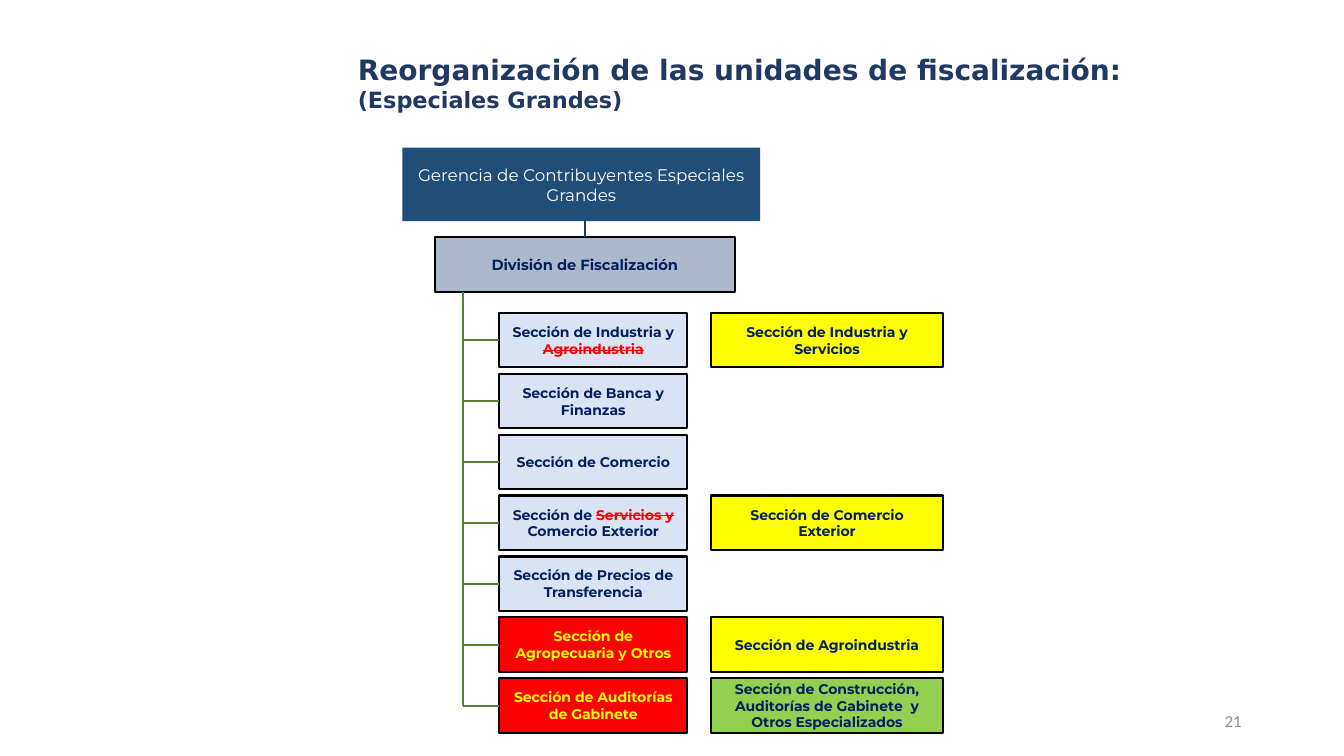
from dataclasses import dataclass

import pptx
import pptx.dml.color
import pptx.enum.shapes
import pptx.enum.text
import pptx.oxml.ns
import pptx.util
from lxml import etree

Pt = pptx.util.Pt
RGB = pptx.dml.color.RGBColor.from_string
ALIGN = pptx.enum.text.PP_ALIGN


@dataclass(frozen=True)
class Theme:
    white: str = "FFFFFF"
    black: str = "000000"
    title: str = "203864"
    navy: str = "002060"
    management: str = "1F4E79"
    division: str = "ADB9CA"
    current: str = "DAE3F3"
    removed: str = "FF0000"
    changed: str = "FFFF00"
    added: str = "92D050"
    branch: str = "548235"
    page: str = "8C8C8C"
    title_font: str = "DejaVu Sans"
    chart_font: str = "Montserrat"
    page_font: str = "Calibri"
    title_size: float = 20
    subtitle_size: float = 16
    management_size: float = 12
    division_size: float = 10.5
    section_size: float = 10
    page_size: float = 12


T = Theme()


def write(p, text, font=T.chart_font, size=T.section_size, color=T.navy,
          bold=True, align=ALIGN.CENTER):
    """Fill a paragraph; parts between ~ marks are struck out in red."""
    p.alignment = align
    for i, part in enumerate(text.split("~")):
        if not part:
            continue
        struck = i % 2 == 1
        r = p.add_run()
        r.text = part
        r.font.name, r.font.size, r.font.bold = font, Pt(size), bold
        r.font.color.rgb = RGB(T.removed if struck else color)
        if struck:
            r.font._element.set("strike", "sngStrike")


def add_box(x, y, w, h, fill, line=T.black, weight=1.5):
    sp = s.shapes.add_shape(pptx.enum.shapes.MSO_SHAPE.RECTANGLE,
                            Pt(x), Pt(y), Pt(w), Pt(h))
    sp.shadow.inherit = False
    sp.fill.solid()
    sp.fill.fore_color.rgb = RGB(fill)
    if line:
        sp.line.color.rgb = RGB(line)
        sp.line.width = Pt(weight)
    else:
        sp.line.fill.background()
    sp.text_frame.word_wrap = True
    sp.text_frame.vertical_anchor = pptx.enum.text.MSO_ANCHOR.MIDDLE
    return sp


prs = pptx.Presentation()
prs.slide_width, prs.slide_height = Pt(960), Pt(540)
s = prs.slides.add_slide(prs.slide_layouts[6])

# Title
title = add_box(248.5, 24, 711.5, 70, T.white, T.white, 0.75)
tf = title.text_frame
write(tf.paragraphs[0], "Reorganización de las unidades de fiscalización:",
      font=T.title_font, size=T.title_size, color=T.title, align=ALIGN.LEFT)
write(tf.add_paragraph(), "(Especiales Grandes)",
      font=T.title_font, size=T.subtitle_size, color=T.title, align=ALIGN.LEFT)

# Upper levels
management = add_box(287.5, 105.5, 255.5, 52.5, T.management, None)
write(management.text_frame.paragraphs[0],
      "Gerencia de Contribuyentes Especiales Grandes",
      size=T.management_size, color=T.white, bold=False)
division = add_box(310.5, 169.5, 214.5, 39, T.division)
write(division.text_frame.paragraphs[0], "División de Fiscalización",
      size=T.division_size)

# Sections: current name, its fill and text colour, new name, its fill
SECTIONS = [
    ("Sección de Industria y ~Agroindustria~", T.current, T.navy,
     "Sección de Industria y Servicios", T.changed),
    ("Sección de Banca y Finanzas", T.current, T.navy, None, None),
    ("Sección de Comercio", T.current, T.navy, None, None),
    ("Sección de ~Servicios y~ Comercio Exterior", T.current, T.navy,
     "Sección de Comercio Exterior", T.changed),
    ("Sección de Precios de Transferencia", T.current, T.navy, None, None),
    ("Sección de Agropecuaria y Otros", T.removed, T.changed,
     "Sección de Agroindustria", T.changed),
    ("Sección de Auditorías de Gabinete", T.removed, T.changed,
     "Sección de Construcción, Auditorías de Gabinete  y Otros Especializados",
     T.added),
]
TOP, PITCH, HEIGHT = 223.5, 43.5, 39
SECTION_X, NEW_X, TRUNK_X = 356.5, 508, 330.5

# Lines: start, end, colour, joined box and its side
lines = [((417.75, 158), (417.75, 169.5), T.title, division, 0)]
for i, (name, fill, color, new_name, new_fill) in enumerate(SECTIONS):
    y = TOP + i * PITCH
    section = add_box(SECTION_X, y, 134.5, HEIGHT, fill)
    write(section.text_frame.paragraphs[0], name, color=color)
    if new_name:
        new_section = add_box(NEW_X, y, 165.5, HEIGHT, new_fill)
        write(new_section.text_frame.paragraphs[0], new_name)
    middle = y + HEIGHT / 2
    lines.append(((TRUNK_X, middle), (SECTION_X, middle), T.branch, section, 1))
lines.append(((TRUNK_X, 208.5), (TRUNK_X, middle), T.branch, None, None))

for start, end, color, target, side in lines:
    line = s.shapes.add_connector(pptx.enum.shapes.MSO_CONNECTOR.STRAIGHT,
                                  *map(Pt, start + end))
    if target is not None:
        line.end_connect(target, side)
    line.line.color.rgb = RGB(color)
    line.line.width = Pt(1.5)
    etree.SubElement(line._element.spPr, pptx.oxml.ns.qn("a:effectLst"))

# Page number
page = s.shapes.add_textbox(Pt(678), Pt(500.5), Pt(216), Pt(29))
page.text_frame.word_wrap = True
page.text_frame.vertical_anchor = pptx.enum.text.MSO_ANCHOR.MIDDLE
write(page.text_frame.paragraphs[0], "21", font=T.page_font, size=T.page_size,
      color=T.page, bold=False, align=ALIGN.RIGHT)

prs.save("out.pptx")
